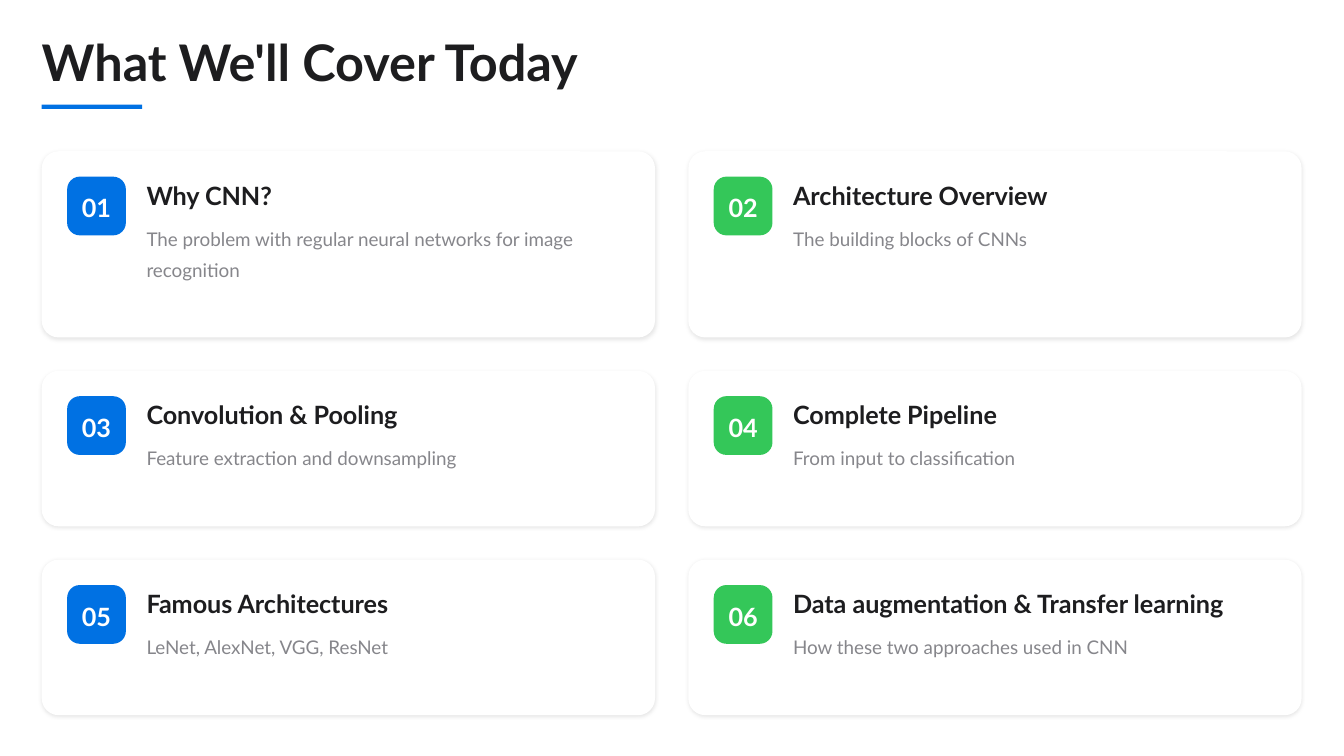
from lxml import etree
from pptx import Presentation
from pptx import util as u
from pptx.dml.color import RGBColor
from pptx.enum import shapes, text
from pptx.oxml import ns

Cm = u.Cm
INK = {"dark": "1D1D1F", "gray": "86868B", "white": "FFFFFF",
       "blue": "0071E3", "green": "34C759"}

deck = Presentation()
deck.slide_width, deck.slide_height = Cm(25.4), Cm(14.29)
slide = deck.slides.add_slide(deck.slide_layouts[6])


def block(x, y, w, h, ink, r=0):
    """Add a filled box with corner radius r."""
    kind = shapes.MSO_SHAPE.ROUNDED_RECTANGLE if r else shapes.MSO_SHAPE.RECTANGLE
    box = slide.shapes.add_shape(kind, Cm(x), Cm(y), Cm(w), Cm(h))
    if r:
        box.adjustments[0] = r / min(w, h)
    box.fill.solid()
    box.fill.fore_color.rgb = RGBColor.from_string(INK[ink])
    box.line.fill.background()
    box.shadow.inherit = False
    return box


def write(box, words, size, ink, lead, bold=True, align=text.PP_ALIGN.LEFT):
    """Set one middle-anchored paragraph without margins."""
    frame = box.text_frame
    frame.word_wrap = True
    frame.vertical_anchor = text.MSO_ANCHOR.MIDDLE
    frame.margin_left = frame.margin_right = 0
    frame.margin_top = frame.margin_bottom = 0
    para = frame.paragraphs[0]
    para.text = words
    para.alignment = align
    para.line_spacing = lead
    font = para.font
    font.name, font.size, font.bold = "Lato", u.Pt(size), bold
    font.color.rgb = RGBColor.from_string(INK[ink])


# Title and its underline
left = 0.79
title = slide.shapes.add_textbox(Cm(left), Cm(0.79), Cm(24.28), Cm(0.97))
write(title, "What We'll Cover Today", 27, "dark", 0.8)
block(left, 1.98, 1.9, 0.08, "blue")

# Agenda: card height, then the topics of that row
rows = [
    (3.52, [("Why CNN?", "The problem with regular neural networks for image recognition", 1.17),
            ("Architecture Overview", "The building blocks of CNNs", 0.58)]),
    (2.94, [("Convolution & Pooling", "Feature extraction and downsampling", 0.58),
            ("Complete Pipeline", "From input to classification", 0.58)]),
    (2.94, [("Famous Architectures", "LeNet, AlexNet, VGG, ResNet", 0.58),
            ("Data augmentation & Transfer learning",
             "How these two approaches used in CNN", 0.58)]),
]
wide, step, gap, pad = 11.59, 12.22, 0.63, 0.48
top, num = 2.86, 0

for high, topics in rows:
    for col, (head, note, tall) in enumerate(topics):
        num += 1
        x, y = left + col * step, top + pad

        # Card with a soft shadow
        card = block(x, top, wide, high, "white", 0.32)
        glow = etree.SubElement(
            card._element.spPr.find(ns.qn("a:effectLst")), ns.qn("a:outerShdw"),
            blurRad=str(u.Pt(2.2)), dist=str(u.Pt(0.8)), dir="5400000",
            algn="ctr", rotWithShape="0")
        tint = etree.SubElement(glow, ns.qn("a:srgbClr"), val="000000")
        etree.SubElement(tint, ns.qn("a:alpha"), val="10000")

        # Number badge
        badge = block(x + pad, y, 1.11, 1.11, ("blue", "green")[col], 0.24)
        write(badge, f"{num:02}", 13.5, "white", 1.1, align=text.PP_ALIGN.CENTER)

        # Heading and note
        box = slide.shapes.add_textbox(Cm(x + 1.98), Cm(y), Cm(9.37), Cm(0.64))
        write(box, head, 13.5, "dark", 1.1)
        box = slide.shapes.add_textbox(Cm(x + 1.98), Cm(y + 0.8), Cm(9.3), Cm(tall))
        write(box, note, 10.1, "gray", 1.4, bold=False)
    top += high + gap

deck.save("out.pptx")
